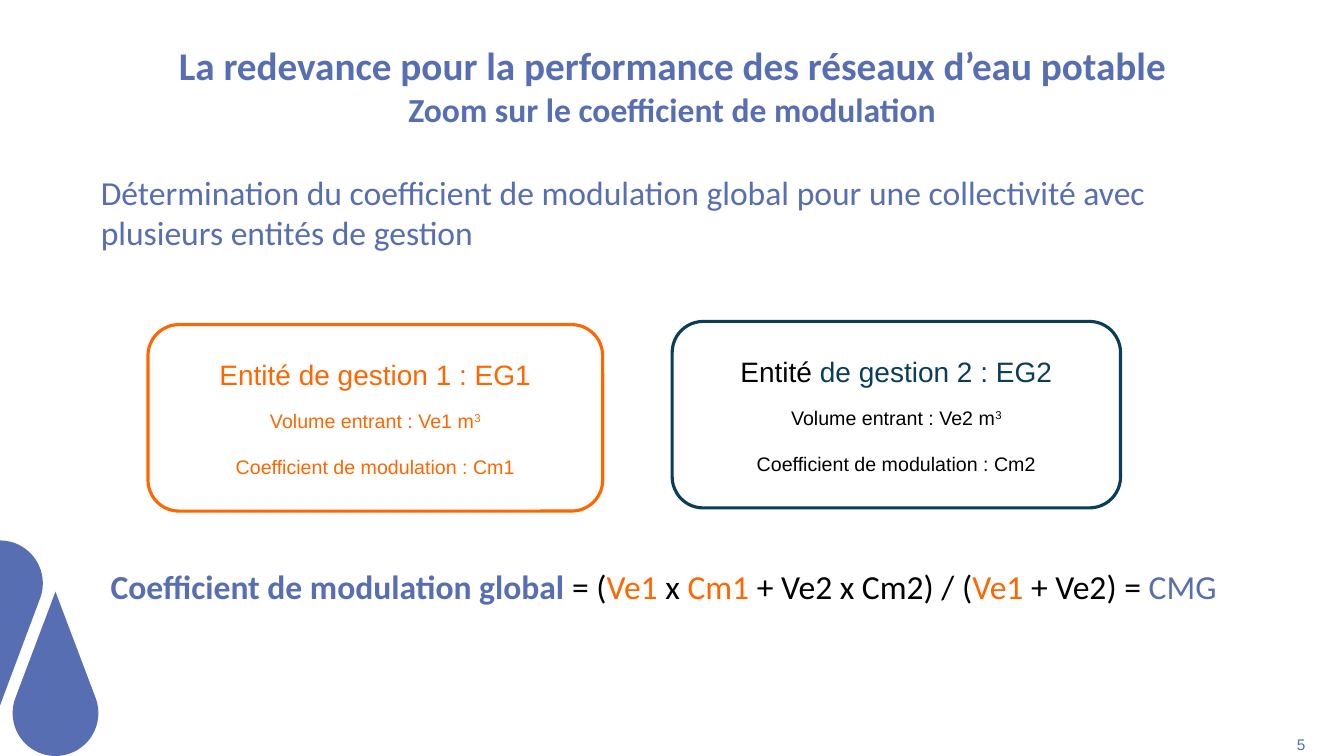
import math
from dataclasses import dataclass

from pptx import Presentation, util as u
from pptx.dml.color import RGBColor
from pptx.enum import shapes, text

BLUE, ORANGE, NAVY, BLACK, WHITE = "586EB3", "FF6600", "0A3D57", "000000", "FFFFFF"
LINE_BREAK = "\v"


@dataclass
class Run:
    text: str
    size: float
    color: str
    font: str = "Calibri"
    bold: bool = False
    superscript: bool = False


@dataclass
class Line:
    runs: list[Run]
    space_before: float = 0


@dataclass
class Entity:
    left: float
    top: float
    width: float
    number: int
    border: str
    first_word: str
    details: str


def rgb(value: str) -> RGBColor:
    return RGBColor.from_string(value)


def write(shape, lines: list[Line], align, anchor=text.MSO_ANCHOR.TOP,
          inset_x: float = 0.25, inset_y: float = 0.13) -> None:
    frame = shape.text_frame
    frame.word_wrap = True
    frame.vertical_anchor = anchor
    frame.margin_left = frame.margin_right = u.Cm(inset_x)
    frame.margin_top = frame.margin_bottom = u.Cm(inset_y)
    for index, line in enumerate(lines):
        paragraph = frame.add_paragraph() if index else frame.paragraphs[0]
        paragraph.alignment = align
        if line.space_before:
            paragraph.space_before = u.Pt(line.space_before)
        for item in line.runs:
            if item.text == LINE_BREAK:
                paragraph.add_line_break()
                continue
            run = paragraph.add_run()
            run.text = item.text
            run.font.name = item.font
            run.font.size = u.Pt(item.size)
            run.font.bold = item.bold
            run.font.color.rgb = rgb(item.color)
            if item.superscript:
                run._r.get_or_add_rPr().set("baseline", "30000")


def add_text(slide, left: float, top: float, width: float, height: float,
             lines: list[Line], align=text.PP_ALIGN.LEFT, **layout) -> None:
    box = slide.shapes.add_textbox(u.Cm(left), u.Cm(top), u.Cm(width), u.Cm(height))
    write(box, lines, align, **layout)


def add_entity(slide, entity: Entity) -> None:
    shape = slide.shapes.add_shape(
        shapes.MSO_SHAPE.ROUNDED_RECTANGLE,
        u.Cm(entity.left), u.Cm(entity.top), u.Cm(entity.width), u.Cm(4.7))
    shape.shadow.inherit = False
    shape.fill.solid()
    shape.fill.fore_color.rgb = rgb(WHITE)
    shape.line.color.rgb = rgb(entity.border)
    shape.line.width = u.Pt(2.25)
    number, color = entity.number, entity.details
    write(shape, [
        Line([Run("Entité", 20, entity.first_word, "Arial"),
              Run(f" de gestion {number} : EG{number}", 20, entity.border, "Arial")]),
        Line([Run(f"Volume entrant : Ve{number} m", 14, color, "Arial"),
              Run("3", 14, color, "Arial", superscript=True)], 12.6),
        Line([Run(f"Coefficient de modulation : Cm{number}", 14, color, "Arial")], 16.1),
    ], text.PP_ALIGN.CENTER, text.MSO_ANCHOR.MIDDLE)


def arc(center_x: float, center_y: float, start: int, end: int) -> list[tuple[int, int]]:
    radius = 1.08
    return [(u.Cm(center_x + radius * math.cos(math.radians(angle))),
             u.Cm(center_y + radius * math.sin(math.radians(angle))))
            for angle in range(start, end + 1, 3)]


def add_drops(slide) -> None:
    cut_drop = arc(0, 14.7, -90, 21) + [(u.Cm(0), u.Cm(17.78))]
    whole_drop = arc(1.4, 17.97, -21, 201) + [(u.Cm(1.4), u.Cm(14.91))]
    builder = slide.shapes.build_freeform(*cut_drop[0])
    builder.add_line_segments(cut_drop[1:], close=True)
    builder.move_to(*whole_drop[0])
    builder.add_line_segments(whole_drop[1:], close=True)
    drops = builder.convert_to_shape()
    drops.shadow.inherit = False
    drops.fill.solid()
    drops.fill.fore_color.rgb = rgb(BLUE)
    drops.line.fill.background()


def main() -> None:
    presentation = Presentation()
    presentation.slide_width, presentation.slide_height = u.Cm(33.87), u.Cm(19.05)
    slide = presentation.slides.add_slide(presentation.slide_layouts[6])

    # Decoration in the corner
    add_drops(slide)

    # Title and introduction
    add_text(slide, 1.7, 0.76, 30.48, 2.77, [Line([
        Run("La redevance pour la performance des réseaux d’eau potable", 28, BLUE, bold=True),
        Run(LINE_BREAK, 28, BLUE),
        Run("Zoom sur le coefficient de modulation", 24, BLUE, bold=True),
    ])], text.PP_ALIGN.CENTER, anchor=text.MSO_ANCHOR.MIDDLE)
    add_text(slide, 2.54, 4.32, 28.8, 2.8, [Line([
        Run("Détermination du coefficient de modulation global pour une collectivité avec "
            "plusieurs entités de gestion", 24, BLUE),
    ])], inset_x=0, inset_y=0)

    # Management entities
    for entity in (Entity(3.73, 8.18, 11.46, 1, ORANGE, ORANGE, ORANGE),
                   Entity(16.94, 8.1, 11.3, 2, NAVY, BLACK, BLACK)):
        add_entity(slide, entity)

    # Formula
    terms = [("= (", BLACK), ("Ve1 ", ORANGE), ("x ", BLACK), ("Cm1 ", ORANGE),
             ("+ Ve2 x Cm2) / (", BLACK), ("Ve1 ", ORANGE), ("+ Ve2) = ", BLACK),
             ("CMG", BLUE)]
    add_text(slide, 2.54, 14.12, 28.63, 1.14, [Line(
        [Run("Coefficient de modulation global ", 24, BLUE, bold=True)]
        + [Run(term, 24, color) for term, color in terms])])

    # Slide number
    add_text(slide, 31.47, 18.49, 1.73, 0.56, [Line([Run("5", 11, BLUE, "Arial")])],
             text.PP_ALIGN.RIGHT, anchor=text.MSO_ANCHOR.MIDDLE, inset_x=0.3, inset_y=0)

    presentation.save("out.pptx")


if __name__ == "__main__":
    main()
